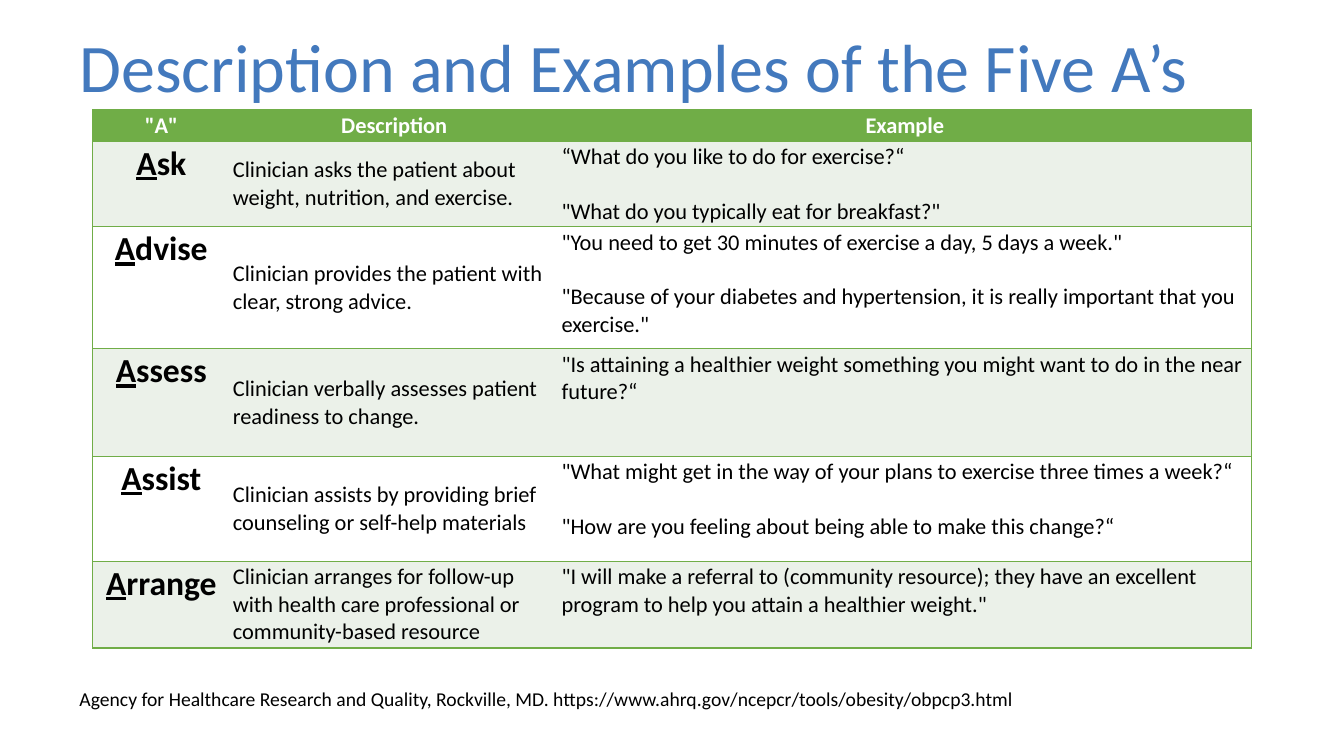
from lxml.etree import SubElement
from pptx import Presentation
from pptx.dml.color import RGBColor
from pptx.enum.text import MSO_ANCHOR as Anchor, PP_ALIGN as Align
from pptx.oxml.ns import qn
from pptx.util import Inches, Pt

FONT = "Calibri"
BLUE = RGBColor(0x43, 0x79, 0xBD)
GREEN = RGBColor(0x70, 0xAD, 0x47)
PALE_GREEN = RGBColor(0xEB, 0xF1, 0xE9)
WHITE = RGBColor(0xFF, 0xFF, 0xFF)
BLACK = RGBColor(0x00, 0x00, 0x00)

TITLE = "Description and Examples of the Five A’s"
SOURCE = ("Agency for Healthcare Research and Quality, Rockville, MD. "
          "https://www.ahrq.gov/ncepcr/tools/obesity/obpcp3.html")
HEADINGS = ['"A"', "Description", "Example"]
COLUMN_WIDTHS = [1.36, 3.26, 6.87]
HEADER_HEIGHT = 0.31
# Step, row height, description, examples
STEPS = [
    ("Ask", 0.85,
     "Clinician asks the patient about weight, nutrition, and exercise.",
     ["“What do you like to do for exercise?“",
      '"What do you typically eat for breakfast?"']),
    ("Advise", 1.21,
     "Clinician provides the patient with clear, strong advice.",
     ['"You need to get 30 minutes of exercise a day, 5 days a week."',
      '"Because of your diabetes and hypertension, it is really important '
      'that you exercise."']),
    ("Assess", 1.07,
     "Clinician verbally assesses patient readiness to change.",
     ['"Is attaining a healthier weight something you might want to do in '
      'the near future?“']),
    ("Assist", 1.04,
     "Clinician assists by providing brief counseling or self-help materials",
     ['"What might get in the way of your plans to exercise three times a week?“',
      '"How are you feeling about being able to make this change?“']),
    ("Arrange", 0.86,
     "Clinician arranges for follow-up with health care professional or "
     "community-based resource",
     ['"I will make a referral to (community resource); they have an '
      'excellent program to help you attain a healthier weight."']),
]


def style_font(font, size, color, bold=False):
    font.name = FONT
    font.size = Pt(size)
    font.bold = bold
    font.color.rgb = color


def add_line(slide, left, top, width, height, text, size, color):
    """Place one line of text in the given box."""
    box = slide.shapes.add_textbox(Inches(left), Inches(top),
                                   Inches(width), Inches(height))
    frame = box.text_frame
    frame.word_wrap = True
    frame.text = text
    style_font(frame.paragraphs[0].runs[0].font, size, color)
    return frame


def add_title(slide, left, top, width, height):
    frame = add_line(slide, left, top, width, height, TITLE, 48.6, BLUE)
    frame.vertical_anchor = Anchor.MIDDLE
    frame.paragraphs[0].line_spacing = 0.9


def set_borders(cell, visible):
    """Draw the visible sides in green and clear the others."""
    properties = cell._tc.get_or_add_tcPr()
    for side in "LRTB":
        border = SubElement(properties, qn(f"a:ln{side}"), w=str(Pt(1)))
        if side in visible:
            fill = SubElement(border, qn("a:solidFill"))
            SubElement(fill, qn("a:srgbClr"), val=str(GREEN))
        else:
            SubElement(border, qn("a:noFill"))


def prepare_cell(cell, column, fill_color):
    cell.margin_left = cell.margin_right = Inches(0.03)
    cell.margin_top = cell.margin_bottom = Inches(0.02)
    set_borders(cell, ("LTB", "TB", "RTB")[column])
    cell.fill.solid()
    cell.fill.fore_color.rgb = fill_color


def fill_heading(cell, heading):
    cell.text_frame.text = heading
    paragraph = cell.text_frame.paragraphs[0]
    paragraph.alignment = Align.CENTER
    style_font(paragraph.runs[0].font, 16, WHITE, bold=True)


def fill_step(cell, step):
    """Underline the initial A of the step."""
    paragraph = cell.text_frame.paragraphs[0]
    paragraph.alignment = Align.CENTER
    for part, underlined in ((step[0], True), (step[1:], False)):
        run = paragraph.add_run()
        run.text = part
        style_font(run.font, 24, BLACK, bold=True)
        run.font.underline = underlined


def fill_body(cell, lines):
    """Write the lines as paragraphs set one line apart."""
    cell.text_frame.text = "\n".join(lines)
    for index, paragraph in enumerate(cell.text_frame.paragraphs):
        if index:
            paragraph.space_before = Pt(19.5)
        style_font(paragraph.runs[0].font, 16, BLACK)


def add_steps_table(slide, left, top):
    heights = [HEADER_HEIGHT] + [height for _, height, _, _ in STEPS]
    table = slide.shapes.add_table(
        len(heights), len(COLUMN_WIDTHS), Inches(left), Inches(top),
        Inches(sum(COLUMN_WIDTHS)), Inches(sum(heights))).table
    for column, width in zip(table.columns, COLUMN_WIDTHS):
        column.width = Inches(width)
    for row, height in zip(table.rows, heights):
        row.height = Inches(height)

    # Header row
    for column, heading in enumerate(HEADINGS):
        cell = table.cell(0, column)
        prepare_cell(cell, column, GREEN)
        fill_heading(cell, heading)

    # One banded row per step
    for row, (step, _, description, examples) in enumerate(STEPS, start=1):
        cells = [table.cell(row, column) for column in range(len(HEADINGS))]
        for column, cell in enumerate(cells):
            prepare_cell(cell, column, PALE_GREEN if row % 2 else WHITE)
        step_cell, description_cell, example_cell = cells
        fill_step(step_cell, step)
        fill_body(description_cell, [description])
        description_cell.vertical_anchor = Anchor.MIDDLE
        fill_body(example_cell, examples)


def main():
    deck = Presentation()
    deck.slide_width = Inches(13.33)
    deck.slide_height = Inches(7.5)
    slide = deck.slides.add_slide(deck.slide_layouts[6])
    add_title(slide, 0.69, -0.03, 11.5, 1.45)
    add_steps_table(slide, 0.92, 1.09)
    add_line(slide, 0.69, 6.77, 10.5, 0.34, SOURCE, 14, BLACK)
    deck.save("out.pptx")


if __name__ == "__main__":
    main()
